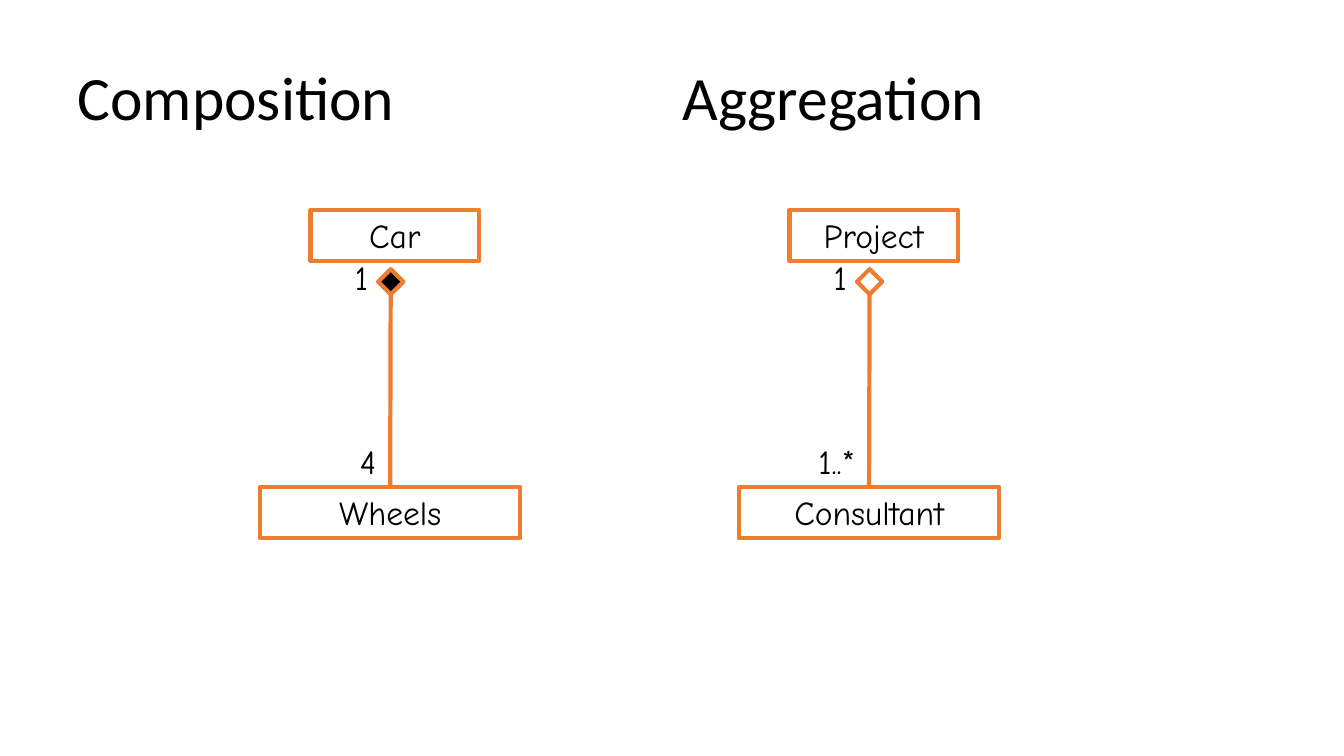
from dataclasses import dataclass

from lxml.etree import SubElement
from pptx import Presentation
from pptx.dml.color import RGBColor
from pptx.enum.shapes import MSO_CONNECTOR, MSO_SHAPE
from pptx.enum.text import MSO_ANCHOR, MSO_AUTO_SIZE, PP_ALIGN
from pptx.oxml.ns import qn
from pptx.util import Emu, Pt

PX = 9144  # 100 px to the inch
COLORS = {"outline": "ED7D31", "text": "000000", "solid": "000000"}
LINE_WIDTH = Pt(3)


@dataclass
class Relation:
    left: int
    owner: str
    member: str
    member_count: str
    filled: bool


RELATIONS = [
    Relation(258, "Car", "Wheels", "4", True),
    Relation(733, "Project", "Consultant", "1..*", False),
]


def px(n: int) -> Emu:
    return Emu(n * PX)


def rgb(name: str) -> RGBColor:
    return RGBColor.from_string(COLORS[name])


def write(sp, text: str, align: PP_ALIGN) -> None:
    tf = sp.text_frame
    tf.word_wrap = True
    tf.auto_size = MSO_AUTO_SIZE.SHAPE_TO_FIT_TEXT
    tf.vertical_anchor = MSO_ANCHOR.TOP
    p = tf.paragraphs[0]
    p.text = text
    p.alignment = align
    p.font.name = "Comic Neue"
    p.font.size = Pt(24)
    p.font.color.rgb = rgb("text")


def add_outline(s, kind: MSO_SHAPE, x: int, y: int, w: int, h: int):
    sp = s.shapes.add_shape(kind, px(x), px(y), px(w), px(h))
    sp.shadow.inherit = False
    sp.fill.background()
    sp.line.color.rgb = rgb("outline")
    sp.line.width = LINE_WIDTH
    return sp


def add_class(s, name: str, x: int, y: int, w: int):
    sp = add_outline(s, MSO_SHAPE.RECTANGLE, x, y, w, 51)
    write(sp, name, PP_ALIGN.CENTER)
    return sp


def add_label(s, text: str, x: int, y: int, w: int, align: PP_ALIGN) -> None:
    write(s.shapes.add_textbox(px(x), px(y), px(w), px(50)), text, align)


def add_link(s, diamond, member) -> None:
    line = s.shapes.add_connector(MSO_CONNECTOR.STRAIGHT, 0, 0, 0, 0)
    line.begin_connect(diamond, 2)
    line.end_connect(member, 0)
    line.line.color.rgb = rgb("outline")
    line.line.width = LINE_WIDTH
    SubElement(line._element.spPr, qn("a:effectLst"))


def add_relation(s, rel: Relation) -> None:
    # Classes
    member = add_class(s, rel.member, rel.left, 483, 258)
    add_class(s, rel.owner, rel.left + 50, 208, 167)

    # Diamond and link
    diamond = add_outline(s, MSO_SHAPE.DIAMOND, rel.left + 117, 267, 25, 25)
    if rel.filled:
        diamond.fill.solid()
        diamond.fill.fore_color.rgb = rgb("solid")
    add_link(s, diamond, member)

    # Multiplicities
    add_label(s, rel.member_count, rel.left + 42, 433, 83, PP_ALIGN.RIGHT)
    add_label(s, "1", rel.left + 84, 250, 42, PP_ALIGN.LEFT)


def add_title(s, text: str) -> None:
    title = s.shapes.title
    title.left, title.top, title.width, title.height = map(px, (67, 50, 1178, 100))
    title.text_frame.vertical_anchor = MSO_ANCHOR.MIDDLE
    p = title.text_frame.paragraphs[0]
    p.text = text
    p.alignment = PP_ALIGN.LEFT
    p.line_spacing = 0.9
    p.font.name = "Calibri"
    p.font.size = Pt(44)
    p.font.color.rgb = rgb("text")
    # One tab per inch
    p._p.get_or_add_pPr().set("defTabSz", str(px(100)))


def main() -> None:
    prs = Presentation()
    prs.slide_width, prs.slide_height = px(1333), px(750)
    s = prs.slides.add_slide(prs.slide_layouts[5])
    add_title(s, "Composition\t\t\tAggregation")
    for rel in RELATIONS:
        add_relation(s, rel)
    prs.save("out.pptx")


if __name__ == "__main__":
    main()
